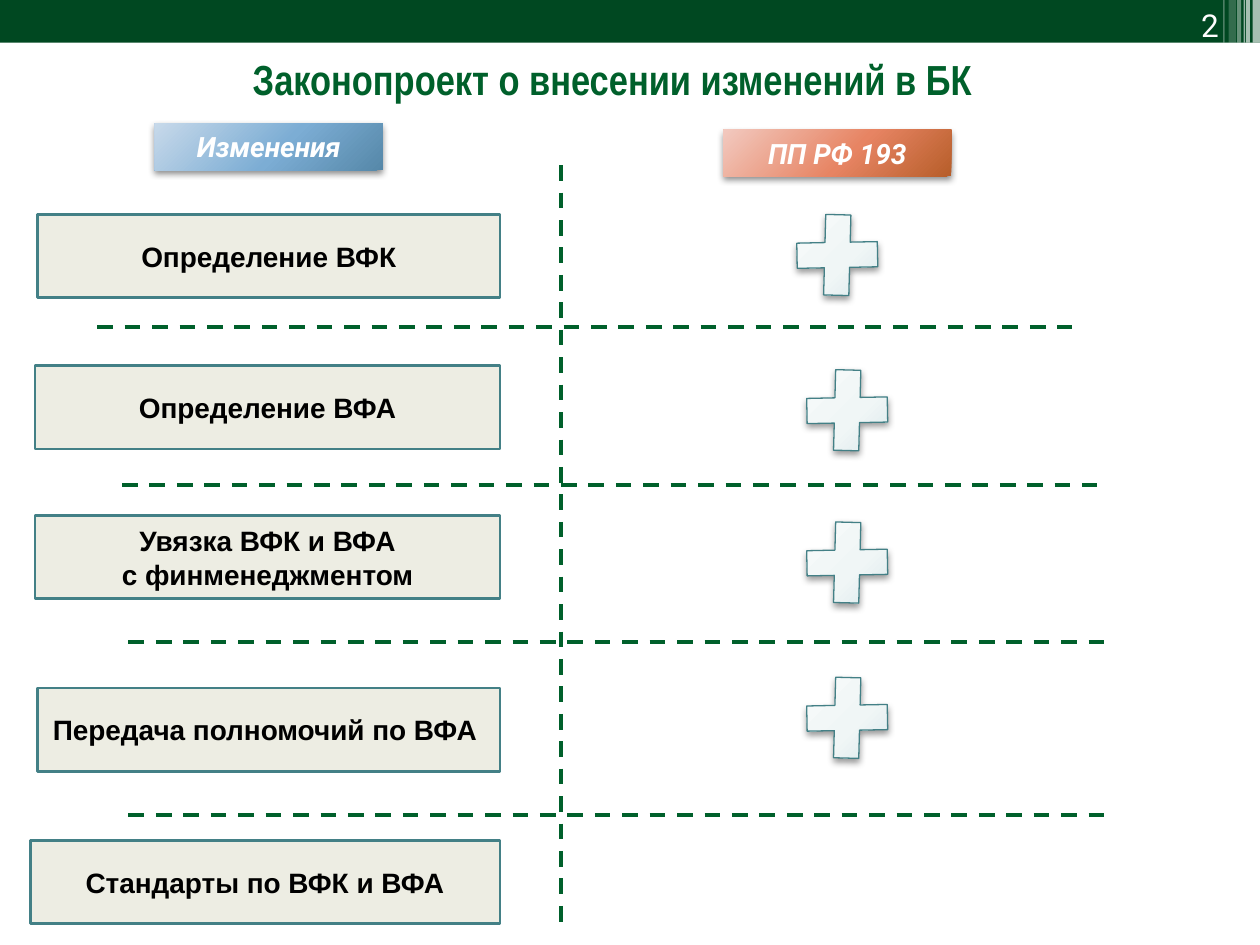
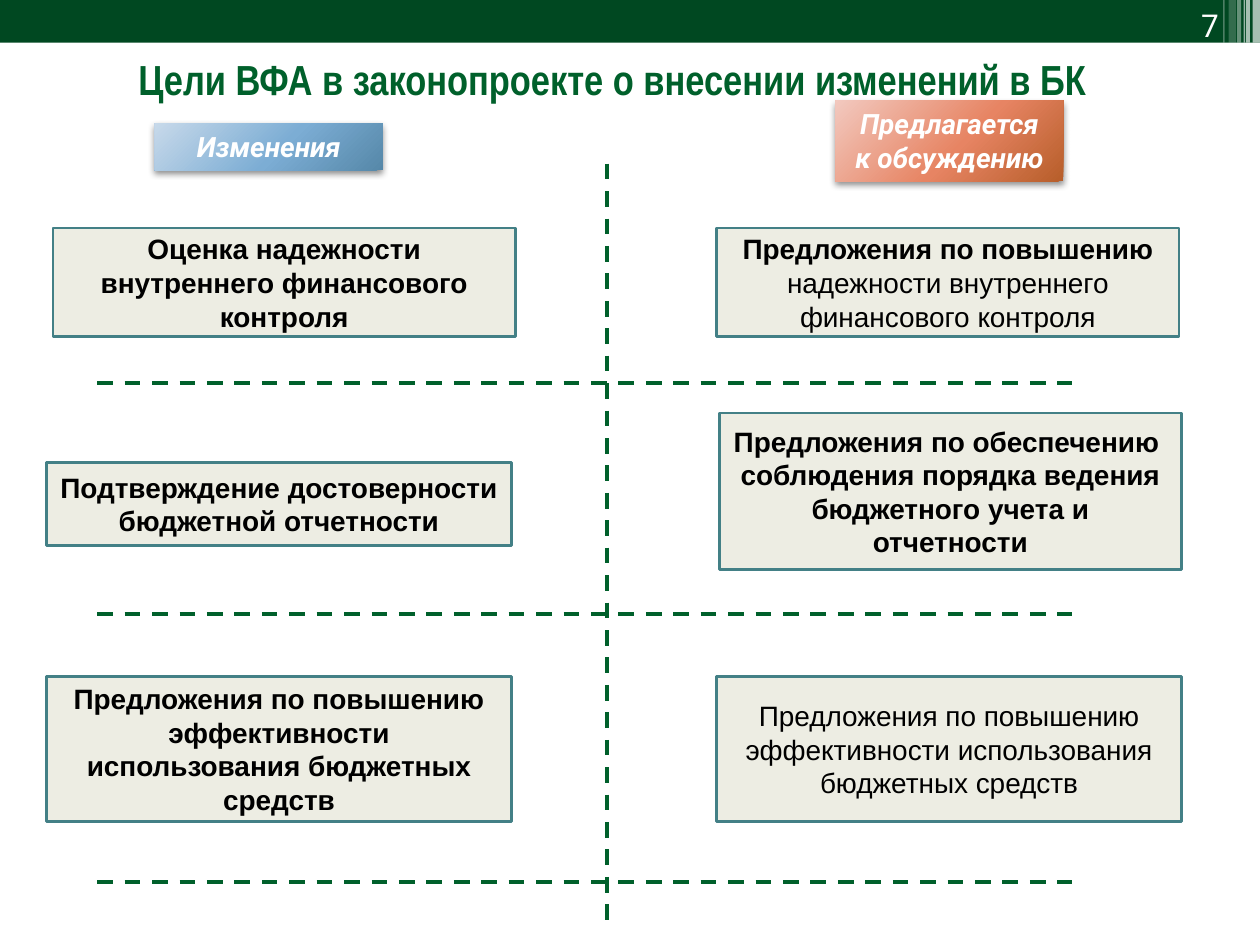
"""Build two slides comparing budget code amendments with current rules."""
from typing import NamedTuple

from lxml.etree import SubElement
from pptx import Presentation
from pptx.dml.color import RGBColor
from pptx.enum.dml import MSO_LINE_DASH_STYLE as Dash
from pptx.enum.shapes import MSO_CONNECTOR as Connector, MSO_SHAPE as Shape
from pptx.enum.text import MSO_ANCHOR as Anchor, MSO_AUTO_SIZE as AutoSize, PP_ALIGN as Align
from pptx.oxml.ns import qn
from pptx.util import Cm, Pt

BAND_GREEN = RGBColor(0x00, 0x48, 0x21)
TITLE_GREEN = RGBColor(0x00, 0x60, 0x2B)
TEAL = RGBColor(0x43, 0x80, 0x86)
STONE = RGBColor(0xED, 0xED, 0xE3)
WHITE = RGBColor(0xFF, 0xFF, 0xFF)
BLACK = RGBColor(0x00, 0x00, 0x00)
BLUE_STOPS = (RGBColor(0xC7, 0xD9, 0xEA), RGBColor(0x7C, 0xAD, 0xD4), RGBColor(0x56, 0x88, 0xA9))
ORANGE_STOPS = (RGBColor(0xF2, 0xC9, 0xBF), RGBColor(0xE7, 0x84, 0x63), RGBColor(0xB7, 0x5E, 0x2A))
PLUS_STOPS = (RGBColor(0xFE, 0xFE, 0xFE), RGBColor(0xF0, 0xF6, 0xF6), RGBColor(0xBF, 0xD9, 0xDD))
STOP_PLACES = (0, 55, 100)
GRADIENT_FOCUS = {"l": -40, "t": -90, "r": 140, "b": 190}

PAGE_WIDTH, PAGE_HEIGHT, BAND_HEIGHT = 25.4, 19.05, 0.86
DIVIDER_LENGTH = 19.66
PLUS_WIDTH, PLUS_HEIGHT, PLUS_ANGLE = 2.26, 2.16, 315.2
HEADER_WIDTH = 4.6


class Area(NamedTuple):
    left: float
    top: float
    width: float
    height: float


class Stripe(NamedTuple):
    left: float
    width: float
    opacity: int


class Piece(NamedTuple):
    text: str
    bold: bool = True


class Style(NamedTuple):
    font: str
    size: int
    color: RGBColor
    italic: bool = False
    align: Align = Align.CENTER


class Card(NamedTuple):
    area: Area
    paragraphs: list[list[Piece]]


class Header(NamedTuple):
    area: Area
    lines: list[str]
    stops: tuple[RGBColor, ...]


class Point(NamedTuple):
    left: float
    top: float


class Content(NamedTuple):
    title: str
    number: str
    headers: list[Header]
    cards: list[Card]
    axis: Area
    dividers: list[Point]
    pluses: list[Point]


STRIPES = [Stripe(25.25, 0.15, 65), Stripe(25.12, 0.08, 65), Stripe(25.07, 0.03, 60),
           Stripe(24.94, 0.08, 40), Stripe(24.77, 0.15, 20), Stripe(24.66, 0.03, 30)]
TITLE_STYLE = Style("Arial Narrow", 24, TITLE_GREEN)
NUMBER_STYLE = Style("Roboto", 18, WHITE, align=Align.RIGHT)
HEADER_STYLE = Style("Roboto", 16, WHITE, italic=True)
CARD_STYLE = Style("Arial", 16, BLACK)
CHANGES = Header(Area(3.12, 2.49, HEADER_WIDTH, 0.94), ["Изменения"], BLUE_STOPS)
EFFICIENCY = "Предложения по повышению эффективности использования бюджетных средств"

CONTENTS = [
    Content(
        "Законопроект о внесении изменений в БК", "2",
        [Header(Area(14.58, 2.62, HEADER_WIDTH, 0.94), ["ПП РФ 193"], ORANGE_STOPS), CHANGES],
        [Card(Area(0.76, 4.32, 9.32, 1.68), [[Piece("Определение ВФК")]]),
         Card(Area(0.71, 7.37, 9.37, 1.68), [[Piece("Определение ВФА")]]),
         Card(Area(0.71, 10.39, 9.37, 1.68),
              [[Piece("Увязка ВФК и ВФА")], [Piece("с финменеджментом")]]),
         Card(Area(0.76, 13.87, 9.32, 1.68), [[Piece("Передача полномочий по ВФА ")]]),
         Card(Area(0.61, 16.94, 9.47, 1.68), [[Piece("Стандарты по ВФК и ВФА")]])],
        Area(11.3, 3.33, 0, 15.42),
        [Point(1.96, 6.6), Point(2.46, 9.78), Point(2.59, 12.95), Point(2.59, 16.43)],
        [Point(15.75, 4.06), Point(15.95, 7.19), Point(15.95, 10.26), Point(15.95, 13.39)],
    ),
    Content(
        "Цели ВФА в законопроекте о внесении изменений в БК", "7",
        [Header(Area(16.84, 2.03, HEADER_WIDTH, 1.63), ["Предлагается", "к обсуждению"],
                ORANGE_STOPS), CHANGES],
        [Card(Area(1.07, 4.6, 9.32, 2.18),
              [[Piece("Оценка надежности внутреннего финансового контроля")]]),
         Card(Area(0.94, 9.32, 9.37, 1.68),
              [[Piece("Подтверждение достоверности бюджетной отчетности")]]),
         Card(Area(0.94, 13.64, 9.37, 2.92), [[Piece(EFFICIENCY)]]),
         Card(Area(14.45, 4.6, 9.32, 2.18),
              [[Piece("Предложения по повышению "),
                Piece("надежности внутреннего финансового контроля", False)]]),
         Card(Area(14.5, 8.33, 9.32, 3.15),
              [[Piece("Предложения по обеспечению ")],
               [Piece("соблюдения порядка ведения бюджетного учета и отчетности")]]),
         Card(Area(14.45, 13.64, 9.37, 2.92), [[Piece(EFFICIENCY, False)]])],
        Area(12.24, 3.3, 0, 15.39),
        [Point(1.96, 7.72), Point(1.96, 12.37), Point(1.96, 17.78)],
        [],
    ),
]


def write(frame, paragraphs: list[list[Piece]], style: Style, anchor: Anchor) -> None:
    """Fill a text frame run by run."""
    frame.word_wrap = True
    frame.vertical_anchor = anchor
    for index, pieces in enumerate(paragraphs):
        para = frame.paragraphs[0] if index == 0 else frame.add_paragraph()
        para.alignment = style.align
        for piece in pieces:
            span = para.add_run()
            span.text = piece.text
            font = span.font
            font.name, font.size = style.font, Pt(style.size)
            font.bold, font.italic = piece.bold, style.italic
            font.color.rgb = style.color


def add_box(page, area: Area, kind: Shape = Shape.RECTANGLE):
    """Add a preset shape without shadow or outline."""
    box = page.shapes.add_shape(kind, *map(Cm, area))
    box.shadow.inherit = False
    box.line.fill.background()
    return box


def add_solid(page, area: Area, color: RGBColor, opacity: int = 100):
    """Add a rectangle of one colour, transparent if asked."""
    box = add_box(page, area)
    box.fill.solid()
    box.fill.fore_color.rgb = color
    if opacity < 100:
        add_color(box.element.spPr.find(qn("a:solidFill")), color, opacity)
    return box


def add_color(parent, color: RGBColor, opacity: int = 100) -> None:
    """Make a colour the only child of an XML element."""
    for child in list(parent):
        parent.remove(child)
    entry = SubElement(parent, qn("a:srgbClr"), val=str(color))
    if opacity < 100:
        SubElement(entry, qn("a:alpha"), val=str(opacity * 1000))


def add_glow(box, stops: tuple[RGBColor, ...], shadow_opacity: int) -> None:
    """Give a shape a circular gradient and a soft shadow below."""
    box.fill.background()
    properties = box.element.spPr
    gradient = SubElement(properties, qn("a:gradFill"), rotWithShape="1")
    properties.replace(properties.find(qn("a:noFill")), gradient)
    stop_list = SubElement(gradient, qn("a:gsLst"))
    for place, color in zip(STOP_PLACES, stops):
        add_color(SubElement(stop_list, qn("a:gs"), pos=str(place * 1000)), color)
    circle = SubElement(gradient, qn("a:path"), path="circle")
    SubElement(circle, qn("a:fillToRect"),
               {side: str(share * 1000) for side, share in GRADIENT_FOCUS.items()})
    shadow = SubElement(properties.find(qn("a:effectLst")), qn("a:outerShdw"),
                        blurRad=str(Pt(4)), dist=str(Pt(2)), dir="5400000", rotWithShape="0")
    add_color(shadow, BLACK, shadow_opacity)


def add_dashed_line(page, area: Area) -> None:
    """Draw a dashed line across an area with no width or no height."""
    line = page.shapes.add_connector(
        Connector.STRAIGHT, Cm(area.left), Cm(area.top),
        Cm(area.left + area.width), Cm(area.top + area.height))
    line.line.color.rgb = TITLE_GREEN
    line.line.width = Pt(2.25)
    line.line.dash_style = Dash.DASH
    SubElement(line.element.spPr, qn("a:effectLst"))


def add_frame(page, title: str, number: str) -> None:
    """Draw the top band, the page number and the title."""
    add_solid(page, Area(0, 0, PAGE_WIDTH, BAND_HEIGHT), BAND_GREEN)
    for stripe in STRIPES:
        add_solid(page, Area(stripe.left, 0, stripe.width, BAND_HEIGHT), WHITE, stripe.opacity)
    number_box = page.shapes.add_textbox(Cm(20.4), Cm(0), Cm(4.42), Cm(BAND_HEIGHT))
    write(number_box.text_frame, [[Piece(number, False)]], NUMBER_STYLE, Anchor.TOP)
    heading = page.shapes.title
    heading.left, heading.top = Cm(-0.15), Cm(1.07)
    heading.width, heading.height = Cm(24.99), Cm(1.63)
    heading.text_frame.auto_size = AutoSize.NONE
    heading.text_frame.margin_top = Cm(0)
    write(heading.text_frame, [[Piece(title)]], TITLE_STYLE, Anchor.TOP)


def add_header(page, header: Header) -> None:
    """Draw a column header."""
    box = add_box(page, header.area)
    add_glow(box, header.stops, 45)
    write(box.text_frame, [[Piece(line)] for line in header.lines], HEADER_STYLE, Anchor.TOP)
    box.text_frame.auto_size = AutoSize.SHAPE_TO_FIT_TEXT


def add_card(page, card: Card) -> None:
    """Draw an outlined statement card."""
    box = add_solid(page, card.area, STONE)
    box.line.color.rgb = TEAL
    box.line.width = Pt(1.5)
    write(box.text_frame, card.paragraphs, CARD_STYLE, Anchor.MIDDLE)


def add_plus(page, corner: Point) -> None:
    """Draw a plus as a turned multiplication sign."""
    plus = add_box(page, Area(*corner, PLUS_WIDTH, PLUS_HEIGHT), Shape.MATH_MULTIPLY)
    plus.rotation = PLUS_ANGLE
    plus.line.color.rgb = TEAL
    plus.line.width = Pt(0.75)
    add_glow(plus, PLUS_STOPS, 40)


def add_page(deck, content: Content) -> None:
    """Add one comparison slide."""
    page = deck.slides.add_slide(deck.slide_layouts[5])
    add_frame(page, content.title, content.number)
    for card in content.cards:
        add_card(page, card)
    for start in content.dividers:
        add_dashed_line(page, Area(*start, DIVIDER_LENGTH, 0))
    add_dashed_line(page, content.axis)
    for header in content.headers:
        add_header(page, header)
    for corner in content.pluses:
        add_plus(page, corner)


def main() -> None:
    """Build and save the deck."""
    deck = Presentation()
    deck.slide_width, deck.slide_height = Cm(PAGE_WIDTH), Cm(PAGE_HEIGHT)
    for content in CONTENTS:
        add_page(deck, content)
    deck.save("out.pptx")


if __name__ == "__main__":
    main()
